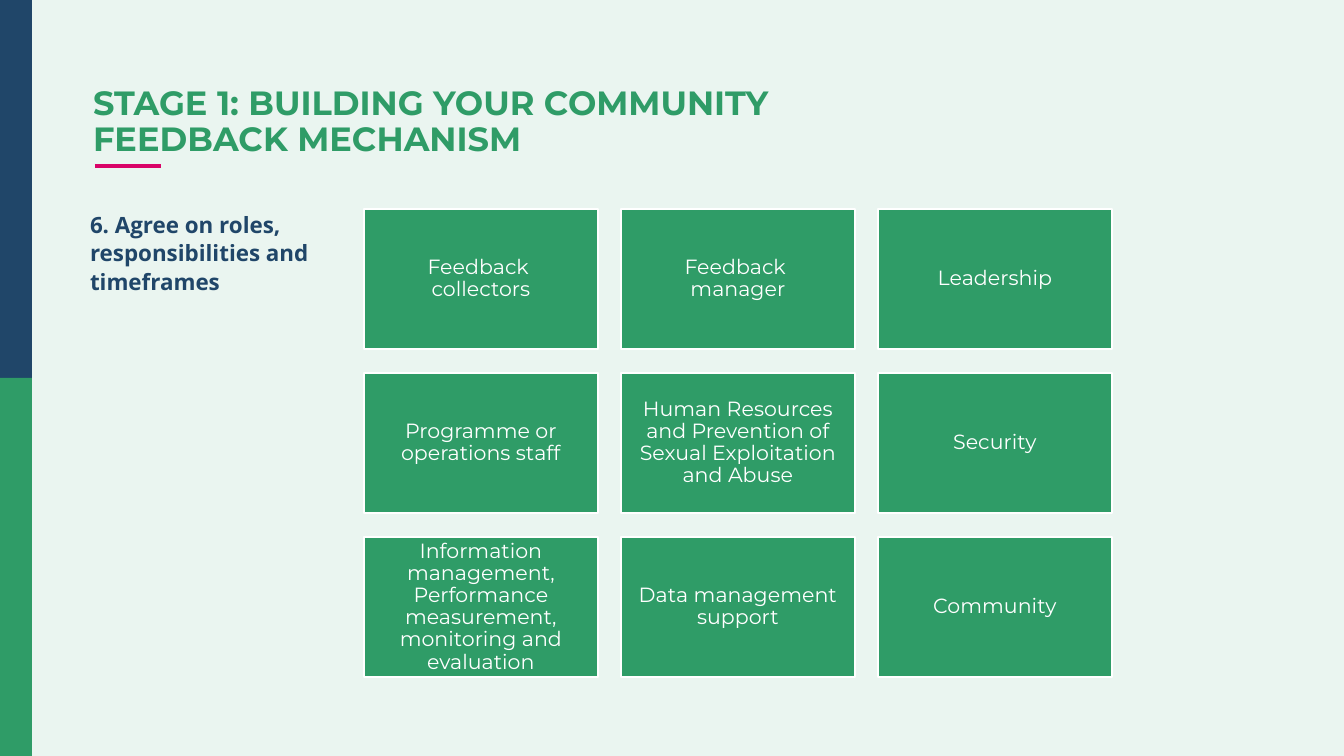
from lxml.etree import SubElement
from pptx import Presentation
from pptx.dml.color import RGBColor
from pptx.enum.shapes import MSO_CONNECTOR, MSO_SHAPE
from pptx.enum.text import MSO_ANCHOR, PP_ALIGN
from pptx.oxml.ns import qn
from pptx.util import Pt

EMU_PER_PX = 914400 / 134.4
WIDTH, HEIGHT = 1344, 756

COLORS = {
    "background": "EAF5F0",
    "navy": "204669",
    "green": "2F9C67",
    "pink": "D90368",
    "white": "FFFFFF",
}
FORMATS = {
    "title": {"name": "Montserrat", "size": Pt(18), "bold": True},
    "step": {"name": "Open Sans", "size": Pt(12), "bold": True},
    "role": {"name": "Montserrat", "size": Pt(11), "bold": False},
}
ROLES = [
    ["Feedback \vcollectors", "Feedback \vmanager", "Leadership"],
    [
        "Programme or operations staff",
        "Human Resources and Prevention of Sexual Exploitation and Abuse",
        "Security",
    ],
    [
        "Information management, Performance measurement, monitoring and evaluation",
        "Data management support",
        "Community",
    ],
]


def px(length):
    return round(length * EMU_PER_PX)


def color(name):
    return RGBColor.from_string(COLORS[name])


class RolesSlide:
    def __init__(self, deck):
        self.page = deck.slides.add_slide(deck.slide_layouts[6])
        fill = self.page.background.fill
        fill.solid()
        fill.fore_color.rgb = color("background")

    def set_text(self, frame, text, style, ink, margins, spacing, align=PP_ALIGN.LEFT):
        """Fill a text frame; margins run left, top, right, bottom."""
        frame.word_wrap = True
        for side, margin in zip(("left", "top", "right", "bottom"), margins):
            setattr(frame, f"margin_{side}", px(margin))
        para = frame.paragraphs[0]
        para.text = text
        para.alignment = align
        para.line_spacing = spacing
        for span in para.runs:
            for name, value in FORMATS[style].items():
                setattr(span.font, name, value)
            span.font.color.rgb = color(ink)

    def text(self, left, top, width, height, *content):
        box = self.page.shapes.add_textbox(px(left), px(top), px(width), px(height))
        self.set_text(box.text_frame, *content)

    def rectangle(self, left, top, width, height, fill, outline=None):
        shape = self.page.shapes.add_shape(
            MSO_SHAPE.RECTANGLE, px(left), px(top), px(width), px(height)
        )
        shape.shadow.inherit = False
        shape.fill.solid()
        shape.fill.fore_color.rgb = color(fill)
        if outline:
            shape.line.color.rgb = color(outline)
            shape.line.width = Pt(1)
        else:
            shape.line.fill.background()
        return shape

    def role(self, left, top, width, height, text, margin):
        card = self.rectangle(left, top, width, height, "green", "white")
        frame = card.text_frame
        frame.vertical_anchor = MSO_ANCHOR.MIDDLE
        self.set_text(frame, text, "role", "white", [margin] * 4, 0.9, PP_ALIGN.CENTER)

    def rule(self, left, right, y, ink):
        line = self.page.shapes.add_connector(
            MSO_CONNECTOR.STRAIGHT, px(left), px(y), px(right), px(y)
        )
        line.line.color.rgb = color(ink)
        line.line.width = Pt(2.25)
        SubElement(line._element.spPr, qn("a:effectLst"))


def main():
    deck = Presentation()
    deck.slide_width, deck.slide_height = px(WIDTH), px(HEIGHT)
    slide = RolesSlide(deck)

    half = HEIGHT // 2
    for index, fill in enumerate(("navy", "green")):
        slide.rectangle(0, index * half, 32, half, fill)
    slide.rule(95, 161, 166, "pink")

    slide.text(
        93, 79, 1158, 124,
        "STAGE 1: BUILDING YOUR COMMUNITY \vFEEDBACK MECHANISM",
        "title", "green", (0, 7, 13, 7), 0.9,
    )
    slide.text(
        77, 202, 288, 456,
        "6. Agree on roles, responsibilities and timeframes",
        "step", "navy", (13, 7, 13, 7), Pt(15.4),
    )

    card_width, card_height = 234, 140
    column_step, row_step = 257, 164
    for row, names in enumerate(ROLES):
        for column, name in enumerate(names):
            slide.role(
                364 + column * column_step, 209 + row * row_step,
                card_width, card_height, name, 7 if column else 0,
            )

    deck.save("out.pptx")


if __name__ == "__main__":
    main()
